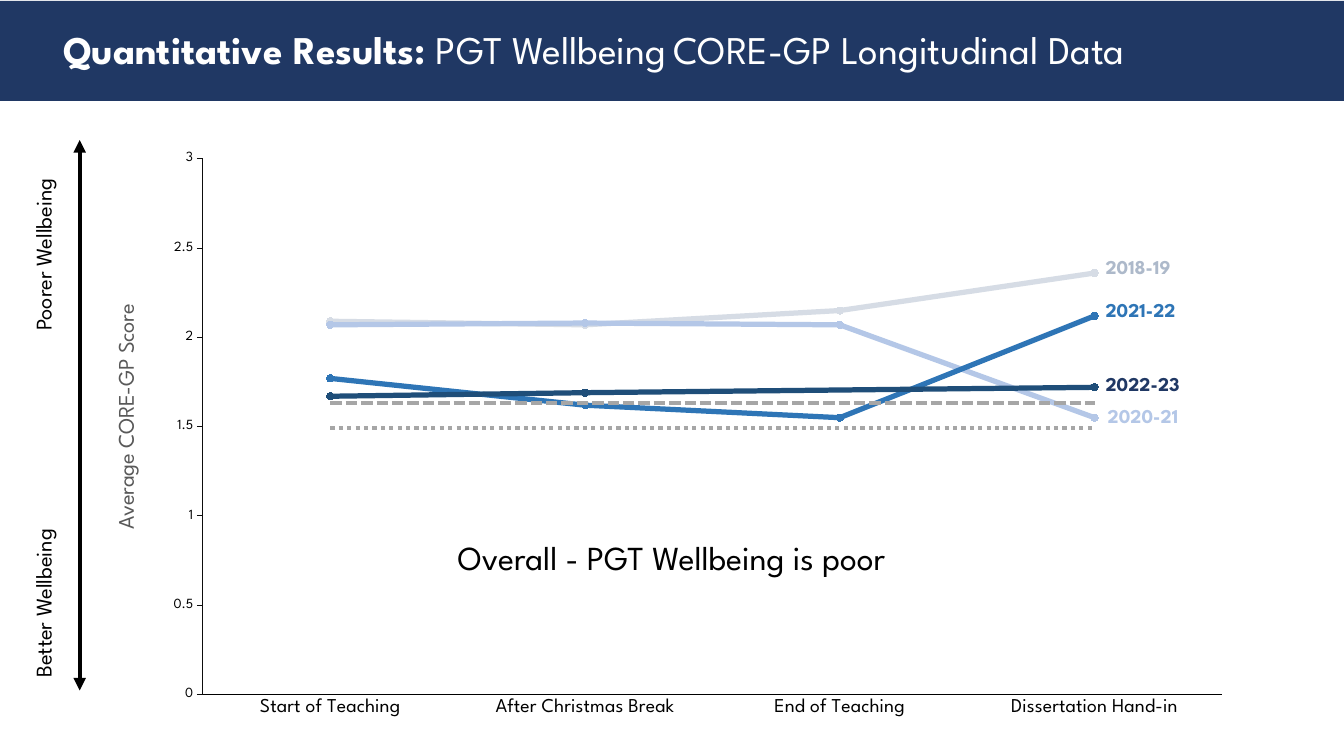
from lxml import etree
from pptx import Presentation
from pptx.chart.data import CategoryChartData
from pptx.dml.color import RGBColor
from pptx.enum.chart import XL_CHART_TYPE, XL_MARKER_STYLE, XL_TICK_MARK
from pptx.enum.dml import MSO_LINE
from pptx.enum.shapes import MSO_CONNECTOR, MSO_SHAPE
from pptx.enum.text import MSO_ANCHOR
from pptx.oxml import parse_xml
from pptx.oxml.ns import nsdecls, qn
from pptx.util import Inches, Pt

LINE_CHART = XL_CHART_TYPE.LINE_MARKERS
CIRCLE, NO_MARKER = XL_MARKER_STYLE.CIRCLE, XL_MARKER_STYLE.NONE
TICK_NONE, TICK_OUT = XL_TICK_MARK.NONE, XL_TICK_MARK.OUTSIDE
DOTTED, DASHED = MSO_LINE.ROUND_DOT, MSO_LINE.SQUARE_DOT
STRAIGHT, RECTANGLE = MSO_CONNECTOR.STRAIGHT, MSO_SHAPE.RECTANGLE
TOP, MIDDLE = MSO_ANCHOR.TOP, MSO_ANCHOR.MIDDLE

FONT = "League Spartan"
NAVY, BLACK, WHITE, GREY = "203864", "000000", "FFFFFF", "A6A6A6"

STAGES = ["Start of Teaching", "After Christmas Break", "End of Teaching", "Dissertation Hand-in"]
# Cohort scores, line colour, marker colour
COHORTS = [
    ([2.09, 2.07, 2.15, 2.36], "D6DCE5", "D6DCE5"),
    ([2.07, 2.08, 2.07, 1.55], "B4C7E7", "B4C7E7"),
    ([1.77, 1.62, 1.55, 2.12], "2E75B6", "2E75B6"),
    ([1.67, 1.69, None, 1.72], "1F4E79", NAVY),
]
# Reference score, line width, dash
REFERENCES = [(1.49, 3, DOTTED), (1.63, 2.75, DASHED)]
# Cohort label, left, top, colour
COHORT_LABELS = [
    ("2021-22", 81.52, 38.8, "2E75B6"),
    ("2022-23", 81.52, 48.53, NAVY),
    ("2020-21", 81.68, 52.8, "B4C7E7"),
    ("2018-19", 81.52, 33.07, "ADB9CA"),
]


def rgb(code):
    return RGBColor.from_string(code)


def style_line(line, colour, width, dash=None):
    line.color.rgb = rgb(colour)
    line.width = Pt(width)
    if dash is not None:
        line.dash_style = dash


def style_font(font, size, colour, bold=False):
    font.name, font.size, font.bold = FONT, Pt(size), bold
    font.color.rgb = rgb(colour)


def manual_layout(target=None, **shares):
    """Layout element whose positions are shares of the chart."""
    layout = parse_xml(f"<c:layout {nsdecls('c')}><c:manualLayout/></c:layout>")
    settings = {"xMode": "edge", "yMode": "edge", **shares}
    if target:
        settings = {"layoutTarget": target, **settings}
    for name, value in settings.items():
        etree.SubElement(layout[0], qn(f"c:{name}")).set("val", str(value))
    return layout


class WellbeingSlide:
    """Positions and lengths are percentages of the slide's width and height."""

    def __init__(self, deck):
        self.width, self.height = deck.slide_width, deck.slide_height
        self.shapes = deck.slides.add_slide(deck.slide_layouts[6]).shapes

    def box(self, left, top, width, height):
        return (int(self.width * left / 100), int(self.height * top / 100),
                int(self.width * width / 100), int(self.height * height / 100))

    def band(self, box, colour):
        band = self.shapes.add_shape(RECTANGLE, *self.box(*box))
        band.shadow.inherit = False
        band.fill.solid()
        band.fill.fore_color.rgb = rgb(colour)
        band.line.fill.background()

    def text(self, box, runs, colour=BLACK, rotation=0, anchor=TOP, spacing=None):
        """Each run is a tuple of words, size and bold."""
        holder = self.shapes.add_textbox(*self.box(*box))
        holder.rotation = rotation
        frame = holder.text_frame
        frame.word_wrap = True
        frame.vertical_anchor = anchor
        paragraph = frame.paragraphs[0]
        paragraph.line_spacing = spacing
        for words, size, bold in runs:
            run = paragraph.add_run()
            run.text = words
            style_font(run.font, size, colour, bold)

    def double_arrow(self, x, top, bottom):
        left, start, _, end = self.box(x, top, 0, bottom)
        arrow = self.shapes.add_connector(STRAIGHT, left, start, left, end)
        style_line(arrow.line, BLACK, 3)
        outline = arrow.line._get_or_add_ln()
        for end_name in ("headEnd", "tailEnd"):
            etree.SubElement(outline, qn(f"a:{end_name}")).set("type", "triangle")
        etree.SubElement(arrow._element.spPr, qn("a:effectLst"))

    def score_chart(self, box):
        scores = CategoryChartData()
        scores.categories = STAGES
        rows = [values for values, _, _ in COHORTS]
        rows += [[level] * len(STAGES) for level, _, _ in REFERENCES]
        for number, values in enumerate(rows, 1):
            scores.add_series(f"Series {number}", values)
        chart = self.shapes.add_chart(LINE_CHART, *self.box(*box), scores).chart
        chart.has_legend = chart.has_title = False
        style_font(chart.font, 10, BLACK)
        plot = chart.plots[0]
        plot.vary_by_categories = False
        self.style_series(plot.series)
        self.style_axes(chart)

        # Fixed plot area, with lines joined across the missing score
        chart_xml = chart._chartSpace.chart
        area = chart_xml.plotArea
        for layout in area.findall(qn("c:layout")):
            area.remove(layout)
        area.insert(0, manual_layout("inner", x=0.09, y=0.03, w=0.89, h=0.91))
        chart_xml.find(qn("c:dispBlanksAs")).set("val", "span")

    def style_series(self, series):
        for cohort, (_, colour, marker_colour) in zip(series, COHORTS):
            cohort.smooth = False
            style_line(cohort.format.line, colour, 3.75)
            marker = cohort.marker
            marker.style, marker.size = CIRCLE, 5
            marker.format.fill.solid()
            marker.format.fill.fore_color.rgb = rgb(marker_colour)
            style_line(marker.format.line, marker_colour, 0.75)
        for reference, (_, width, dash) in zip(list(series)[len(COHORTS):], REFERENCES):
            reference.smooth = False
            reference.marker.style = NO_MARKER
            style_line(reference.format.line, GREY, width, dash)

    def style_axes(self, chart):
        stage_axis, score_axis = chart.category_axis, chart.value_axis
        for axis, size, tick, colour in ((stage_axis, 14, TICK_NONE, BLACK),
                                         (score_axis, 10, TICK_OUT, "0D0D0D")):
            axis.has_major_gridlines = False
            axis.major_tick_mark, axis.minor_tick_mark = tick, TICK_NONE
            style_font(axis.tick_labels.font, size, BLACK)
            style_line(axis.format.line, colour, 0.75)
        score_axis.minimum_scale, score_axis.maximum_scale = 0, 3
        score_axis.major_unit = 0.5
        score_axis.tick_labels.number_format = "General"
        score_axis.tick_labels.number_format_is_linked = False
        title = score_axis.axis_title
        run = title.text_frame.paragraphs[0].add_run()
        run.text = "Average CORE-GP Score"
        style_font(run.font, 16, "595959")
        title_xml = title._element
        for layout in title_xml.findall(qn("c:layout")):
            title_xml.remove(layout)
        title_xml.find(qn("c:tx")).addnext(manual_layout(x=0.01, y=0.27))


def main():
    deck = Presentation()
    deck.slide_width, deck.slide_height = Inches(13.33), Inches(7.5)
    slide = WellbeingSlide(deck)

    # Header band and chart
    slide.band((0, 0.13, 100, 13.2), NAVY)
    slide.score_chart((7.43, 18.67, 85.2, 77.87))

    # Cohort labels beside the line ends
    for cohort, left, top, colour in COHORT_LABELS:
        slide.text((left, top, 11.4, 4.49), [(cohort, 14, True)], colour)

    # Wellbeing direction
    slide.double_arrow(5.93, 18.53, 91.33)
    for direction, top in (("Better Wellbeing", 74.67), ("Poorer Wellbeing", 28.8)):
        slide.text((-4.58, top, 15.53, 4.93), [(direction, 16, False)], rotation=270)

    # Title and conclusion
    slide.text((3.98, 0.27, 92.05, 13.2),
               [("Quantitative Results: ", 28, True), ("PGT Wellbeing", 28, False),
                (" ", 20, False), ("CORE-GP Longitudinal Data", 28, False)],
               WHITE, anchor=MIDDLE, spacing=0.9)
    slide.text((33.31, 70.4, 38.7, 6.67), [("Overall - PGT Wellbeing is poor", 24, False)])

    deck.save("out.pptx")


if __name__ == "__main__":
    main()
